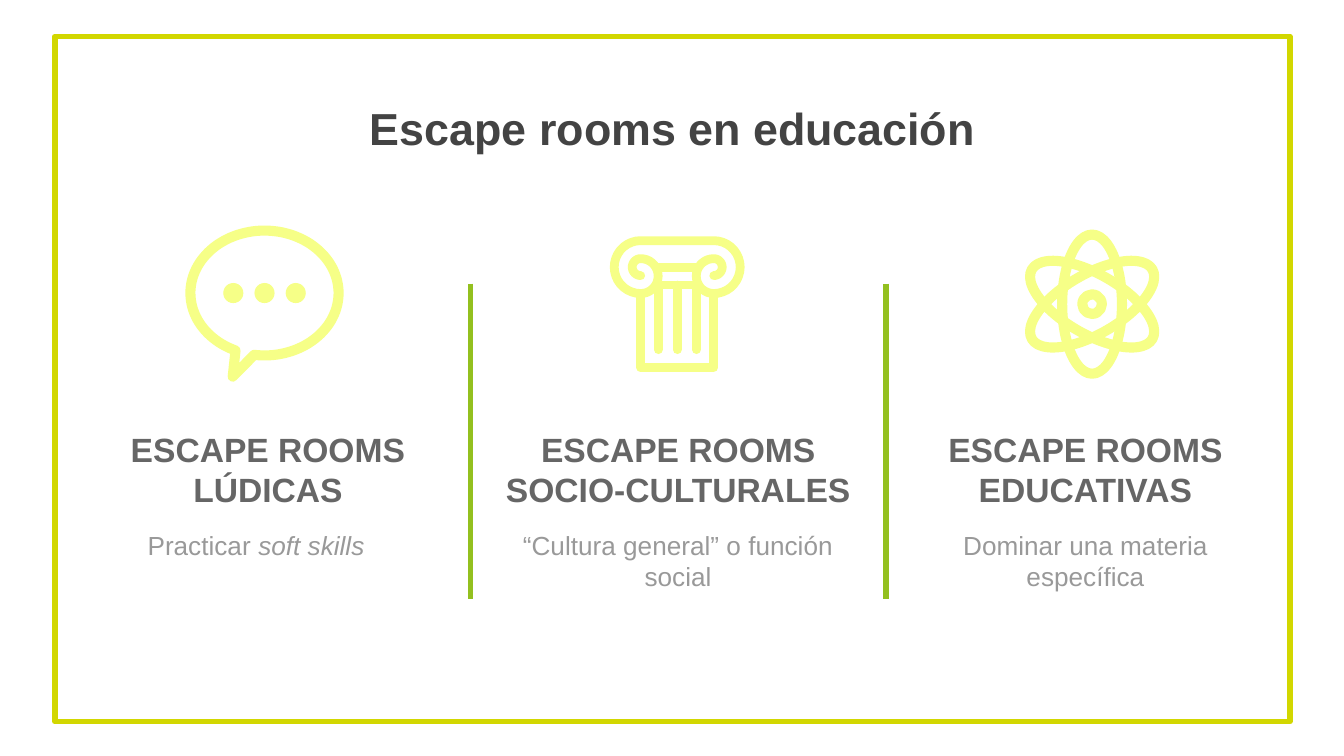
from math import cos, radians, sin

from lxml.etree import SubElement
from pptx import Presentation
from pptx.dml.color import RGBColor
from pptx.enum.shapes import MSO_CONNECTOR, MSO_SHAPE
from pptx.enum.text import MSO_ANCHOR, PP_ALIGN
from pptx.oxml.ns import qn
from pptx.util import Cm, Pt

ICON = "F6FF87"

deck = Presentation()
deck.slide_width, deck.slide_height = Cm(25.4), Cm(14.29)
page = deck.slides.add_slide(deck.slide_layouts[6])


def outline(shape, color, width):
    """Leave the shape hollow, with a solid line and round caps and joins."""
    shape.shadow.inherit = False
    shape.fill.background()
    shape.line.color.rgb = RGBColor.from_string(color)
    shape.line.width = Pt(width)
    line = shape.line._get_or_add_ln()
    line.set("cap", "rnd")
    SubElement(line, qn("a:round"))


def add_text(left, top, width, height, runs, size, color, bold=False,
             anchor=MSO_ANCHOR.TOP):
    """Add a centred text box; runs are (text, italic) pairs."""
    box = page.shapes.add_textbox(Cm(left), Cm(top), Cm(width), Cm(height))
    frame = box.text_frame
    frame.word_wrap = True
    frame.vertical_anchor = anchor
    frame.margin_left = frame.margin_right = Cm(0.25)
    frame.margin_top = frame.margin_bottom = Cm(0.25)
    para = frame.paragraphs[0]
    para.alignment = PP_ALIGN.CENTER
    para.font.name, para.font.size, para.font.bold = "Arial", Pt(size), bold
    para.font.color.rgb = RGBColor.from_string(color)
    for text, italic in runs:
        span = para.add_run()
        span.text = text
        if italic:
            span.font.italic = True


# Frame and title
border = page.shapes.add_shape(MSO_SHAPE.RECTANGLE, Cm(1.04), Cm(0.69), Cm(23.34), Cm(12.95))
outline(border, "D2D700", 3)
add_text(1.04, 1.65, 23.34, 1.47, [("Escape rooms en educación", False)], 24, "434343", True)

# Three columns: heading (left, width) and description (left, width)
columns = [
    ("ESCAPE ROOMS LÚDICAS", 1.75, 6.63,
     [("Practicar ", False), ("soft skills", True)], 1.27, 7.14),
    ("ESCAPE ROOMS SOCIO-CULTURALES", 9.3, 7.04,
     [("“Cultura general” o función social", False)], 9.5, 6.63),
    ("ESCAPE ROOMS EDUCATIVAS", 17.2, 6.63,
     [("Dominar una materia específica", False)], 17.2, 6.63),
]
for heading, left, width, description, text_left, text_width in columns:
    add_text(left, 7.9, width, 1.98, [(heading, False)], 18, "666666", True, MSO_ANCHOR.BOTTOM)
    add_text(text_left, 9.75, text_width, 3.12, description, 14, "999999")

# Dividers
for x in (8.89, 16.74):
    divider = page.shapes.add_connector(MSO_CONNECTOR.STRAIGHT, Cm(x), Cm(5.36), Cm(x), Cm(11.33))
    divider.line.color.rgb = RGBColor.from_string("93C01F")
    divider.line.width = Pt(3)
    SubElement(divider._element.spPr, qn("a:effectLst"))

# Atom: three orbits and a nucleus
atom_x, atom_y = 20.64, 5.75
for width, height, angle in [(1.13, 2.63, 0), (1.13, 2.63, 60), (1.13, 2.63, 120), (0.37, 0.37, 0)]:
    orbit = page.shapes.add_shape(MSO_SHAPE.OVAL, Cm(atom_x - width / 2), Cm(atom_y - height / 2),
                                  Cm(width), Cm(height))
    orbit.rotation = angle
    outline(orbit, ICON, 5.4)

# Speech bubble: an oval arc closed by its tail, and three dots
bubble_x, bubble_y = 5.0, 5.54
bubble = [(bubble_x + 1.4 * cos(radians(a)), bubble_y + 1.18 * sin(radians(a)))
          for a in range(98, -248, -3)]
bubble.append((4.4, 7.12))
for step in (-1, 0, 1):
    dot = page.shapes.add_shape(MSO_SHAPE.OVAL, Cm(bubble_x + 0.59 * step - 0.19),
                                Cm(bubble_y - 0.19), Cm(0.38), Cm(0.38))
    dot.shadow.inherit = False
    dot.fill.solid()
    dot.fill.fore_color.rgb = RGBColor.from_string(ICON)
    dot.line.fill.background()

# Greek column: each scroll is three shrinking half circles
column_x = 12.8
scroll = []
for center_y, radius, start in [(5.05, 0.5, -90), (5.22, 0.33, 90), (5.05, 0.16, -90)]:
    scroll += [(0.69 + radius * cos(radians(a)), center_y + radius * sin(radians(a)))
               for a in range(start, start + 181, 10)]
strokes = [
    [(-x, y) for x, y in reversed(scroll)] + scroll,
    [(-0.69, 5.55), (-0.69, 6.95), (0.69, 6.95), (0.69, 5.55)],
]
strokes += [[(-0.36, y), (0.36, y)] for y in (5.05, 5.39)]
strokes += [[(x, 5.39), (x, 6.61)] for x in (-0.36, 0, 0.36)]

# Stroked outlines of the bubble and the Greek column
paths = [(bubble, True, 5.4)]
paths += [([(column_x + x, y) for x, y in stroke], False, 4.7) for stroke in strokes]
for points, closed, width in paths:
    points = [(Cm(x), Cm(y)) for x, y in points]
    builder = page.shapes.build_freeform(*points[0])
    builder.add_line_segments(points[1:], close=closed)
    outline(builder.convert_to_shape(), ICON, width)

deck.save("out.pptx")
